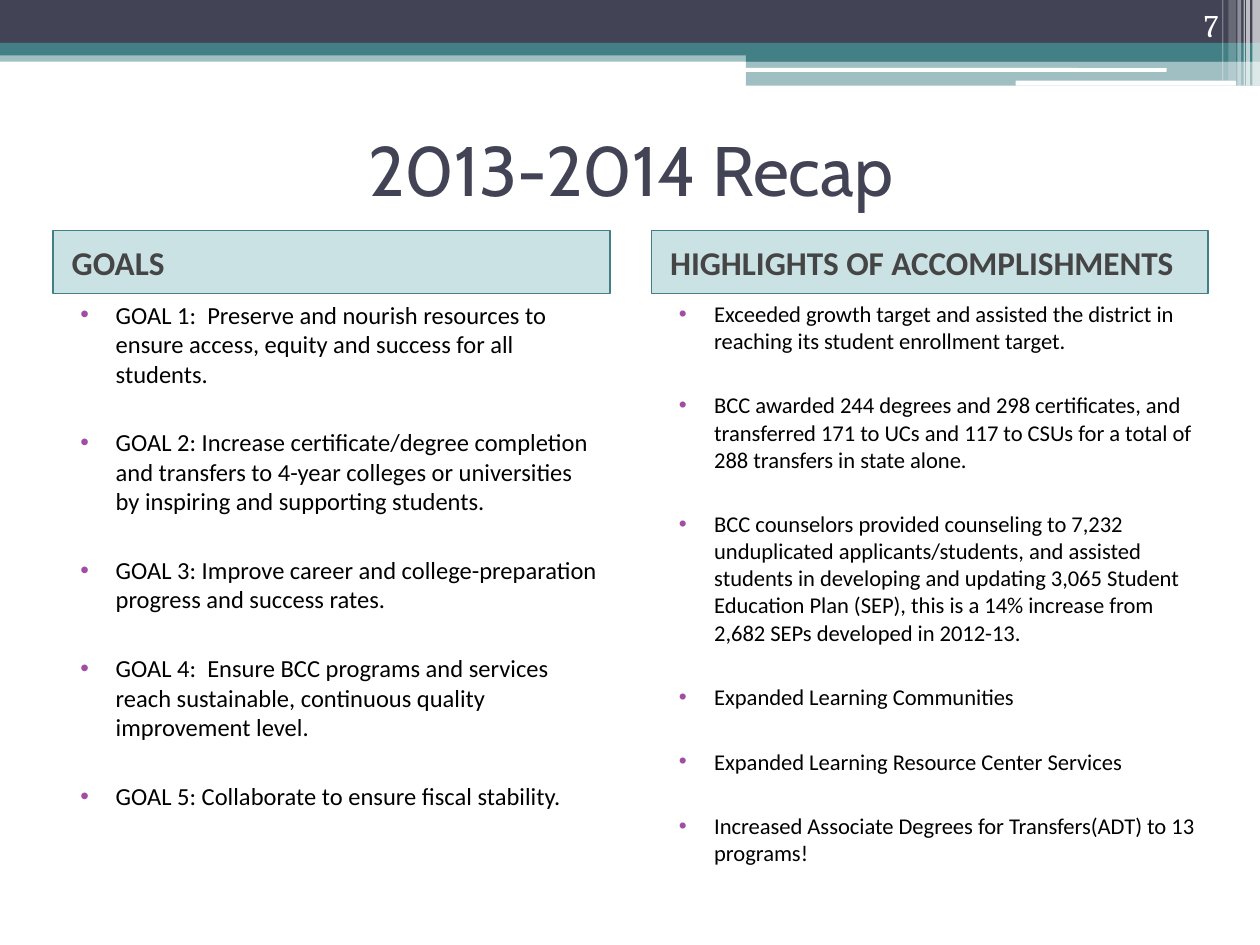
from lxml import etree
from pptx import Presentation
from pptx import util as u
from pptx.dml.color import RGBColor
from pptx.enum import shapes, text
from pptx.oxml import ns

NAVY = RGBColor(0x42, 0x44, 0x56)
TEAL = RGBColor(0x43, 0x80, 0x86)
AQUA = RGBColor(0x32, 0x8E, 0x97)
PURPLE = RGBColor(0xA0, 0x4D, 0xA3)
GRAY = RGBColor(0x45, 0x45, 0x45)
WHITE = RGBColor(0xFF, 0xFF, 0xFF)
BLACK = RGBColor(0, 0, 0)

GOALS = [
    "GOAL 1:  Preserve and nourish resources to ensure access, equity and success for all students.",
    "GOAL 2: Increase certificate/degree completion and transfers to 4-year colleges or universities by inspiring and supporting students.",
    "GOAL 3: Improve career and college-preparation progress and success rates.",
    "GOAL 4:  Ensure BCC programs and services reach sustainable, continuous quality improvement level.",
    "GOAL 5: Collaborate to ensure fiscal stability.",
]
ACCOMPLISHMENTS = [
    "Exceeded growth target and assisted the district in reaching its student enrollment target.",
    "BCC awarded 244 degrees and 298 certificates, and transferred 171 to UCs and 117 to CSUs for a total of 288 transfers in state alone.",
    "BCC counselors provided counseling to 7,232 unduplicated applicants/students, and assisted students in developing and updating 3,065 Student Education Plan (SEP), this is a 14% increase from 2,682 SEPs developed in 2012-13.",
    "Expanded Learning Communities",
    "Expanded Learning Resource Center Services",
    "Increased Associate Degrees for Transfers(ADT) to 13 programs!",
]


def write(frame, lines, size, color, font="Calibri", bold=False, gap=0,
          align=text.PP_ALIGN.LEFT, anchor=text.MSO_ANCHOR.TOP,
          indent=(0, 0), bullet=None):
    frame.word_wrap = True
    frame.auto_size = text.MSO_AUTO_SIZE.NONE
    frame.vertical_anchor = anchor
    for i, line in enumerate(lines):
        paragraph = frame.add_paragraph() if i else frame.paragraphs[0]
        paragraph.alignment = align
        paragraph.space_before = u.Pt(gap if i else 0)
        properties = paragraph._p.get_or_add_pPr()
        properties.set("marL", str(u.Inches(indent[0])))
        properties.set("indent", str(u.Inches(indent[1])))
        if bullet is not None:
            tint = etree.SubElement(properties, ns.qn("a:buClr"))
            etree.SubElement(tint, ns.qn("a:srgbClr"), val=str(bullet))
            etree.SubElement(properties, ns.qn("a:buFont"), typeface="Arial")
            etree.SubElement(properties, ns.qn("a:buChar"), char="•")
        run = paragraph.add_run()
        run.text = line
        run.font.size = u.Pt(size)
        run.font.name = font
        run.font.bold = bold
        run.font.color.rgb = color


class RecapSlide:
    def __init__(self, deck):
        self.slide = deck.slides.add_slide(deck.slide_layouts[5])

    def title(self, heading, left, top, width, height):
        title = self.slide.shapes.title
        title.left, title.top = u.Inches(left), u.Inches(top)
        title.width, title.height = u.Inches(width), u.Inches(height)
        write(title.text_frame, [heading], 40, NAVY, font="Cabin",
              align=text.PP_ALIGN.CENTER, anchor=text.MSO_ANCHOR.MIDDLE)

    def bar(self, left, top, width, height, color, opacity=100, rounded=False, line=None):
        kind = shapes.MSO_SHAPE.ROUNDED_RECTANGLE if rounded else shapes.MSO_SHAPE.RECTANGLE
        bar = self.slide.shapes.add_shape(kind, *map(u.Inches, (left, top, width, height)))
        bar.shadow.inherit = False
        bar.fill.solid()
        bar.fill.fore_color.rgb = color
        if opacity < 100:
            shade = bar.fill._xPr.find(".//" + ns.qn("a:srgbClr"))
            etree.SubElement(shade, ns.qn("a:alpha"), val=str(opacity * 1000))
        if line is None:
            bar.line.fill.background()
        else:
            bar.line.color.rgb = line
            bar.line.width = u.Pt(1)
        return bar

    def header(self, label, left, top, width, height):
        header = self.bar(left, top, width, height, AQUA, 25, line=TEAL)
        write(header.text_frame, [label], 19, GRAY, bold=True,
              anchor=text.MSO_ANCHOR.MIDDLE, indent=(0.05, 0))

    def textbox(self, lines, left, top, width, height, **style):
        box = self.slide.shapes.add_textbox(*map(u.Inches, (left, top, width, height)))
        write(box.text_frame, lines, **style)


def main():
    deck = Presentation()
    deck.slide_width, deck.slide_height = u.Inches(10), u.Inches(7.5)
    recap = RecapSlide(deck)

    recap.bar(0, 0.4, 10, 0.09, TEAL, 50)
    recap.bar(0, 0, 10, 0.34, NAVY)
    recap.bar(0, 0.34, 10, 0.1, TEAL)
    recap.bar(5.92, 0.39, 4.08, 0.1, TEAL)
    recap.bar(5.92, 0.48, 4.08, 0.2, TEAL, 50)
    recap.bar(5.91, 0.54, 3.35, 0.03, WHITE, rounded=True)
    recap.bar(8.06, 0.64, 1.75, 0.04, WHITE, rounded=True)
    for left, width, height, opacity in (
        (9.94, 0.06, 0.68, 65), (9.89, 0.03, 0.68, 65), (9.87, 0.01, 0.68, 60),
        (9.82, 0.03, 0.68, 40), (9.75, 0.06, 0.64, 20), (9.7, 0.01, 0.64, 30),
    ):
        recap.bar(left, 0, width, height, WHITE, opacity)

    recap.title("2013-2014 Recap", 0.42, 0.75, 9.17, 1.17)
    for left, label, items, size, gap in (
        (0.42, "GOALS", GOALS, 14, 22.5),
        (5.17, "HIGHLIGHTS OF ACCOMPLISHMENTS", ACCOMPLISHMENTS, 12.9, 21.4),
    ):
        recap.header(label, left, 1.83, 4.42, 0.5)
        recap.textbox(items, left, 2.33, 4.42, 4.25, size=size, color=BLACK,
                      gap=gap, indent=(0.4, -0.28), bullet=PURPLE)
    recap.textbox(["7"], 8.94, 0, 0.83, 0.4, size=18, color=WHITE, font="Cambria",
                  align=text.PP_ALIGN.RIGHT, anchor=text.MSO_ANCHOR.BOTTOM)
    deck.save("out.pptx")


if __name__ == "__main__":
    main()
